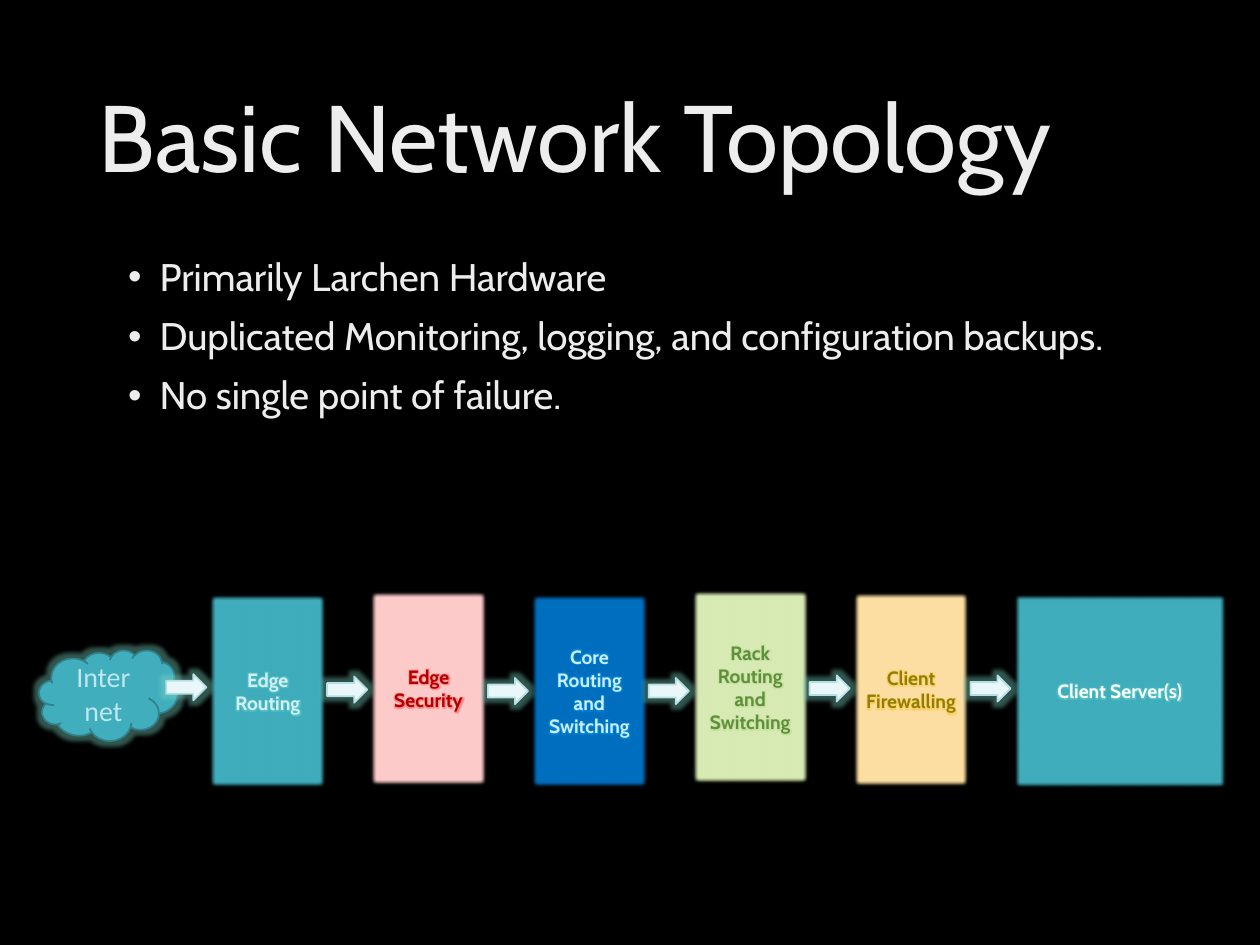
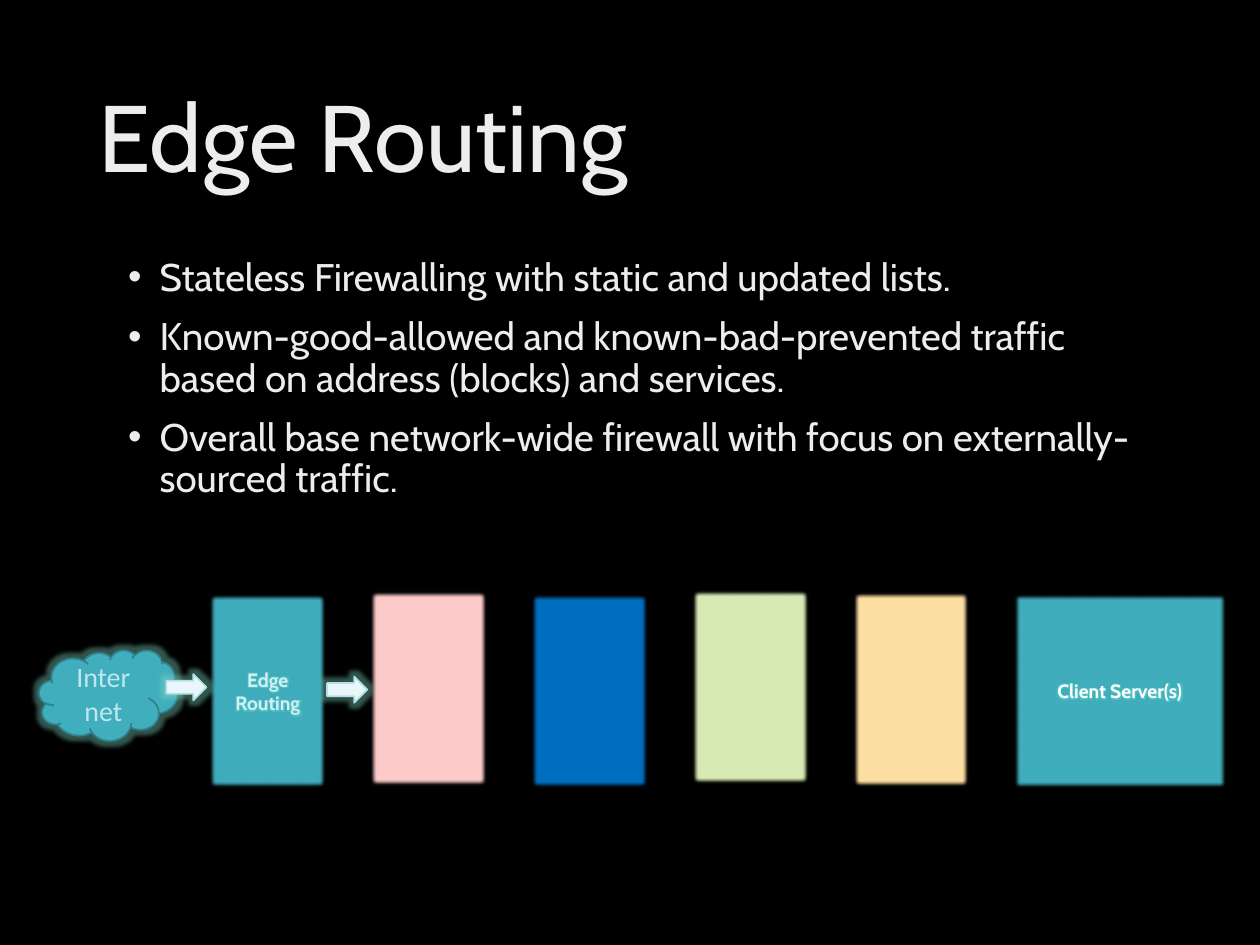
"""Build two network topology slides with a shared chain of devices."""
from dataclasses import dataclass

from lxml.etree import SubElement
from pptx import Presentation
from pptx.dml.color import RGBColor as Color
from pptx.enum.shapes import MSO_SHAPE as Shape
from pptx.enum.text import MSO_ANCHOR as Anchor, PP_ALIGN as Align
from pptx.oxml.ns import qn
from pptx.util import Pt


@dataclass(frozen=True)
class Theme:
    background: str = "000000"
    text: str = "EDEDED"
    teal: str = "41AEBD"
    cloud_line: str = "30818C"
    cloud_text: str = "BFE7EF"
    arrow: str = "EAF7FA"
    arrow_line: str = "B3DFE5"
    glow: str = "7FD8C4"
    font: str = "Cabin"
    cloud_font: str = "Calibri"
    title_size: int = 54
    body_size: int = 22
    cloud_size: int = 16
    label_size: int = 11


theme = Theme()


def add_glow(effects, color, radius, opacity):
    glow = SubElement(effects, qn("a:glow"), rad=str(Pt(radius)))
    tint = SubElement(glow, qn("a:srgbClr"), val=color)
    SubElement(tint, qn("a:alpha"), val=str(opacity * 1000))


def style_text(para, size, color, font=theme.font, bold=False):
    for span in para.runs:
        span.font.size = Pt(size)
        span.font.name = font
        span.font.bold = bold
        span.font.color.rgb = Color.from_string(color)


stages = [
    ("Edge Routing", 338.4, 68.4, theme.teal, "D4EFF4", "5CCFCB"),
    ("Edge Security", 337, 68.4, "FFCCCC", "B00000", "FF6060"),
    ("Core Routing and Switching", 338.4, 68.4, "0070C0", "CCECFF", "0096E0"),
    ("Rack Routing and Switching", 336.2, 68.4, "DAECB6", "608F3D", "B8DC90"),
    ("Client Firewalling", 337.6, 68.4, "FEE0A4", "8F7F08", "FFC83C"),
    ("Client Server(s)", 338.4, 123.1, theme.teal, "FFFFFF", "5CCFCB"),
]
arrow_tops = [385.2, 386.6, 387.4, 387.4, 385.9, 385.9]
stage_left, arrow_left, step = 118.8, 95, 91.9

pages = [
    ("Basic Network Topology",
     ["Primarily Larchen Hardware",
      "Duplicated Monitoring, logging, and configuration backups.",
      "No single point of failure."],
     range(6), 6),
    ("Edge Routing",
     ["Stateless Firewalling with static and updated lists.",
      "Known-good-allowed and known-bad-prevented traffic based on address "
      "(blocks) and services.",
      "Overall base network-wide firewall with focus on externally-sourced "
      "traffic."],
     (0, 5), 2),
]

deck = Presentation()
deck.slide_width, deck.slide_height = Pt(720), Pt(540)

for title, points, labelled, arrow_count in pages:
    page = deck.slides.add_slide(deck.slide_layouts[6])
    page.background.fill.solid()
    page.background.fill.fore_color.rgb = Color.from_string(theme.background)

    title_box = page.shapes.add_textbox(Pt(49.5), Pt(28.8), Pt(621), Pt(104.4))
    title_box.text_frame.word_wrap = True
    title_box.text_frame.vertical_anchor = Anchor.MIDDLE
    title_box.text_frame.text = title
    para = title_box.text_frame.paragraphs[0]
    para.line_spacing = 0.9
    style_text(para, theme.title_size, theme.text)

    body_box = page.shapes.add_textbox(Pt(66.2), Pt(144), Pt(604), Pt(342.7))
    body_box.text_frame.word_wrap = True
    body_box.text_frame.text = "\n".join(points)
    for number, para in enumerate(body_box.text_frame.paragraphs):
        layout = para._p.get_or_add_pPr()
        layout.set("marL", str(Pt(18)))
        layout.set("indent", str(-Pt(18)))
        SubElement(layout, qn("a:buFont"), typeface="Arial")
        SubElement(layout, qn("a:buChar"), char="•")
        para.line_spacing = 0.9
        para.space_before = Pt(10 if number else 0)
        style_text(para, theme.body_size, theme.text)

    cloud = page.shapes.add_shape(
        Shape.CLOUD, Pt(22.3), Pt(371.5), Pt(79.2), Pt(51.8))
    cloud.text_frame.text = "Internet"
    para = cloud.text_frame.paragraphs[0]
    para.alignment = Align.CENTER
    style_text(para, theme.cloud_size, theme.cloud_text, theme.cloud_font)

    for number, (label, top, width, fill, ink, halo) in enumerate(stages):
        stage = page.shapes.add_shape(
            Shape.RECTANGLE, Pt(stage_left + number * step), Pt(top),
            Pt(width), Pt(113))
        stage.fill.solid()
        stage.fill.fore_color.rgb = Color.from_string(fill)
        stage.line.fill.background()
        stage.shadow.inherit = False
        effects = stage._element.spPr.find(qn("a:effectLst"))
        SubElement(effects, qn("a:softEdge"), rad=str(Pt(2.5)))
        if number in labelled:
            stage.text_frame.text = label
            para = stage.text_frame.paragraphs[0]
            para.alignment = Align.CENTER
            style_text(para, theme.label_size, ink, bold=True)
            look = para.runs[0]._r.get_or_add_rPr()
            effects = SubElement(look, qn("a:effectLst"))
            look.find(qn("a:solidFill")).addnext(effects)
            add_glow(effects, halo, 3, 60)

    arrows = [
        page.shapes.add_shape(
            Shape.RIGHT_ARROW, Pt(arrow_left + number * step), Pt(top),
            Pt(23), Pt(15))
        for number, top in enumerate(arrow_tops[:arrow_count])
    ]

    for item in [cloud, *arrows]:
        fill, edge = ((theme.teal, theme.cloud_line) if item is cloud
                      else (theme.arrow, theme.arrow_line))
        item.fill.solid()
        item.fill.fore_color.rgb = Color.from_string(fill)
        item.line.color.rgb = Color.from_string(edge)
        item.line.width = Pt(1)
        item.shadow.inherit = False
        add_glow(item._element.spPr.find(qn("a:effectLst")), theme.glow, 5, 40)

deck.save("out.pptx")
